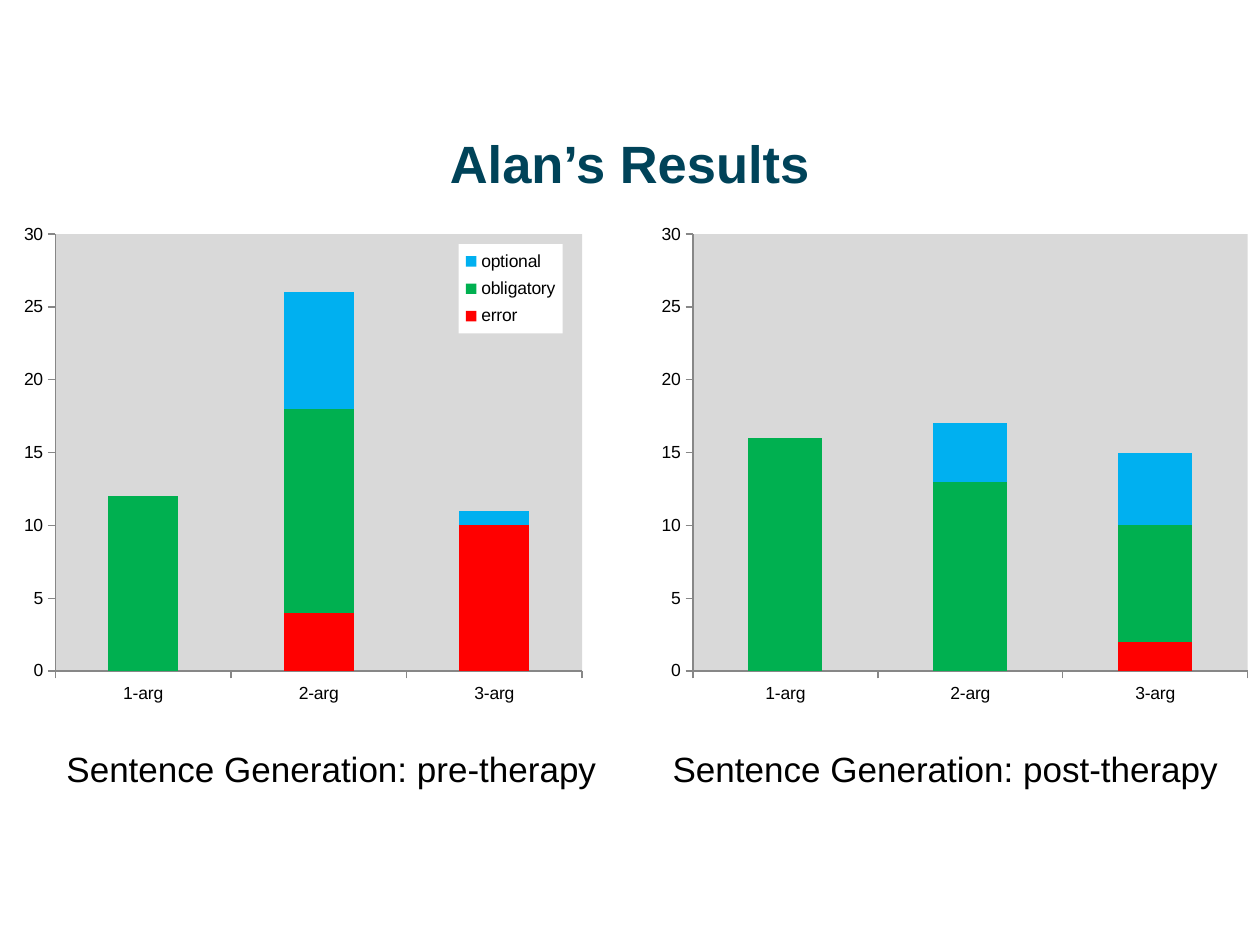
from dataclasses import dataclass
from typing import Optional

from pptx import Presentation
from pptx import oxml
from pptx import util as u
from pptx.chart import data as cd
from pptx.dml.color import RGBColor
from pptx.enum import chart as ce
from pptx.enum import text as te
from pptx.oxml import ns

Box = tuple[float, float, float, float]

FONT = "Arial"
TEAL = RGBColor(0x00, 0x43, 0x59)
BLACK = RGBColor(0, 0, 0)
GRAY = RGBColor(0x87, 0x87, 0x87)
RED = RGBColor(0xFF, 0, 0)
GREEN = RGBColor(0, 0xB0, 0x50)
BLUE = RGBColor(0, 0xB0, 0xF0)
PLOT = RGBColor(0xD9, 0xD9, 0xD9)
WHITE = RGBColor(0xFF, 0xFF, 0xFF)

CATS = ["1-arg", "2-arg", "3-arg"]
HUES = [RED, GREEN, BLUE]


@dataclass
class Panel:
    box: Box
    plot: Box
    names: list[str]
    rows: list[list[Optional[int]]]
    note: str
    spot: Box
    key: Optional[Box] = None


PANELS = [
    Panel((0.2, 4.32, 13.11, 10.01), (0.07, 0.04, 0.81, 0.88),
          ["error", "obligatory", "optional"],
          [[0, 4, 10], [12, 14, 0], [None, 8, 1]],
          "Sentence Generation: pre-therapy", (1.09, 14.94, 11.4, 2.21),
          (0.69, 0.06, 0.16, 0.18)),
    Panel((13.11, 4.32, 12.29, 10.01), (0.07, 0.04, 0.91, 0.88),
          ["Series 1", "Series 2", "Series 3"],
          [[0, 0, 2], [16, 13, 8], [None, 4, 5]],
          "Sentence Generation: post-therapy", (13.31, 14.94, 11.99, 2.21)),
]


def style(font, size: int, color: RGBColor, bold: bool = False) -> None:
    font.name = FONT
    font.size = u.Pt(size)
    font.bold = bold
    font.color.rgb = color


def layout(box: Box, inner: bool = False):
    target = '<c:layoutTarget val="inner"/>' if inner else ""
    modes = "".join(f'<c:{n}Mode val="edge"/>' for n in "xy")
    sizes = "".join(f'<c:{n} val="{v}"/>' for n, v in zip("xywh", box))
    return oxml.parse_xml(
        f'<c:layout {ns.nsdecls("c")}><c:manualLayout>{target}{modes}{sizes}'
        "</c:manualLayout></c:layout>")


def fill(color: RGBColor):
    return oxml.parse_xml(
        f'<c:spPr {ns.nsdecls("c", "a")}><a:solidFill><a:srgbClr val="{color}"/>'
        "</a:solidFill><a:ln><a:noFill/></a:ln></c:spPr>")


def drop(node) -> None:
    for old in node.findall(ns.qn("c:layout")):
        node.remove(old)


def add_key(chart, box: Box) -> None:
    chart.has_legend = True
    key = chart.legend
    key.position = ce.XL_LEGEND_POSITION.RIGHT
    key.include_in_layout = False
    style(key.font, 10, BLACK)
    node = key._element
    drop(node)
    over = node.find(ns.qn("c:overlay"))
    over.addprevious(layout(box))
    over.addnext(fill(WHITE))


def add_bars(slide, panel: Panel) -> None:
    data = cd.CategoryChartData()
    data.categories = CATS
    for name, row in zip(panel.names, panel.rows):
        data.add_series(name, row)
    chart = slide.shapes.add_chart(
        ce.XL_CHART_TYPE.COLUMN_STACKED, *map(u.Cm, panel.box), data).chart
    chart.has_title = False
    chart.has_legend = False
    style(chart.font, 10, BLACK)
    bars = chart.plots[0]
    bars.gap_width = 150
    bars.overlap = 100
    bars.vary_by_categories = False
    for item, hue in zip(bars.series, HUES):
        item.format.fill.solid()
        item.format.fill.fore_color.rgb = hue
    for axis in (chart.category_axis, chart.value_axis):
        axis.has_major_gridlines = False
        axis.major_tick_mark = ce.XL_TICK_MARK.OUTSIDE
        axis.minor_tick_mark = ce.XL_TICK_MARK.NONE
        axis.format.line.color.rgb = GRAY
        axis.format.line.width = u.Pt(0.75)
    chart.value_axis.minimum_scale = 0
    chart.value_axis.maximum_scale = 30
    chart.value_axis.major_unit = 5
    area = chart._chartSpace.chart.plotArea
    drop(area)
    area.insert(0, layout(panel.plot, True))
    area.append(fill(PLOT))
    if panel.key:
        add_key(chart, panel.key)


def add_note(slide, panel: Panel) -> None:
    frame = slide.shapes.add_textbox(*map(u.Cm, panel.spot)).text_frame
    frame.word_wrap = True
    frame.text = panel.note
    para = frame.paragraphs[0]
    props = para._p.get_or_add_pPr()
    props.set("marL", str(u.Cm(0.95)))
    props.set("indent", str(u.Cm(-0.95)))
    style(para.runs[0].font, 20, BLACK)


def add_title(slide) -> None:
    title = slide.shapes.title
    title.left, title.top, title.width, title.height = map(
        u.Cm, (0.91, 2.51, 23.57, 3.61))
    frame = title.text_frame
    frame.text = "Alan’s Results"
    frame.auto_size = te.MSO_AUTO_SIZE.NONE
    frame.vertical_anchor = te.MSO_ANCHOR.TOP
    para = frame.paragraphs[0]
    para.alignment = te.PP_ALIGN.CENTER
    style(para.runs[0].font, 30, TEAL, True)


def main() -> None:
    deck = Presentation()
    deck.slide_width, deck.slide_height = u.Cm(25.4), u.Cm(19.05)
    slide = deck.slides.add_slide(deck.slide_layouts[5])
    add_title(slide)
    for panel in PANELS:
        add_note(slide, panel)
    for panel in PANELS:
        add_bars(slide, panel)
    deck.save("out.pptx")


if __name__ == "__main__":
    main()
